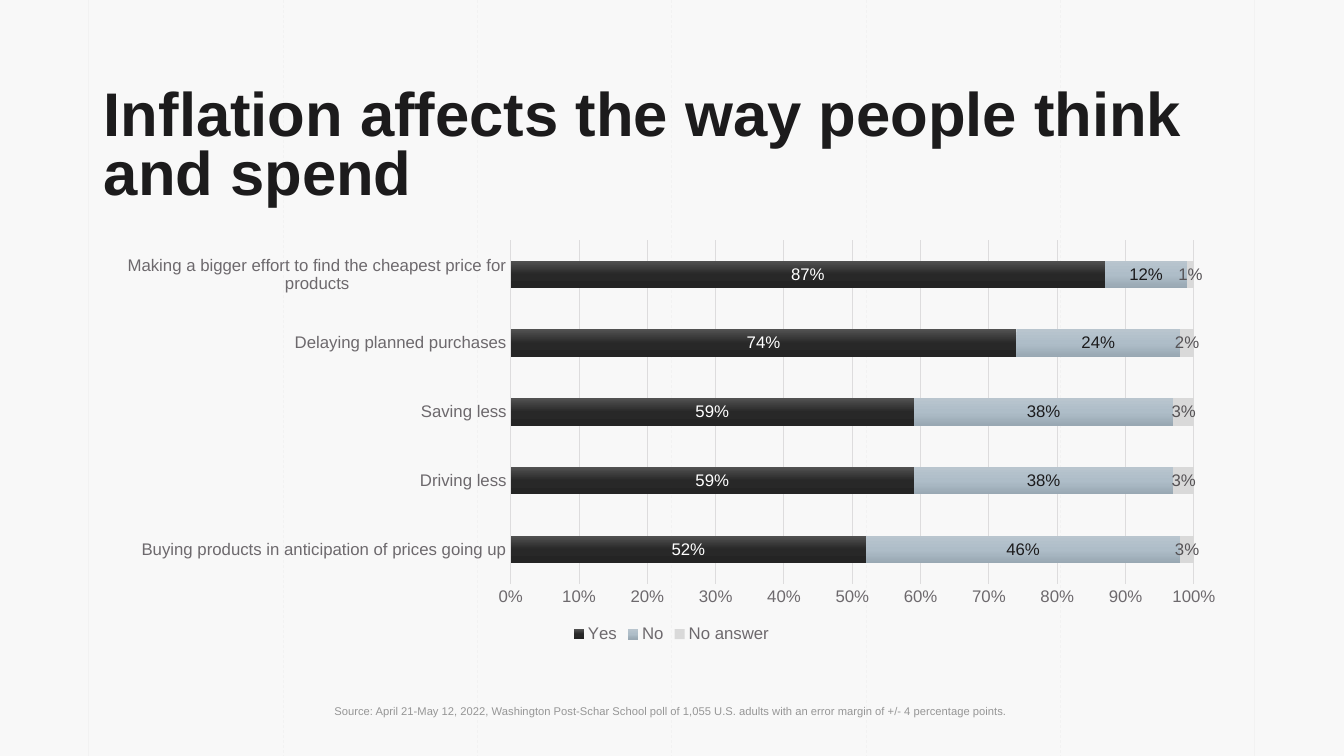
from lxml import etree
from pptx import Presentation
from pptx.chart.data import CategoryChartData
from pptx.dml.color import RGBColor
from pptx.enum.chart import XL_CHART_TYPE, XL_LABEL_POSITION, XL_LEGEND_POSITION, XL_TICK_MARK
from pptx.enum.dml import MSO_LINE
from pptx.enum.shapes import MSO_CONNECTOR, MSO_SHAPE
from pptx.enum.text import MSO_ANCHOR, PP_ALIGN
from pptx.oxml.ns import qn
from pptx.util import Inches, Pt

STACKED_BARS = XL_CHART_TYPE.BAR_STACKED
CENTER_LABEL = XL_LABEL_POSITION.CENTER
BOTTOM = XL_LEGEND_POSITION.BOTTOM
NO_TICK = XL_TICK_MARK.NONE
DASH = MSO_LINE.DASH
STRAIGHT = MSO_CONNECTOR.STRAIGHT
RECTANGLE = MSO_SHAPE.RECTANGLE
TOP = MSO_ANCHOR.TOP
LEFT, CENTER = PP_ALIGN.LEFT, PP_ALIGN.CENTER

FONT = "Arial"
COLORS = {
    "guide": "F2F2F2", "title": "1C1B1C", "axis_text": "6D696D", "grid": "DDDCDD",
    "source": "969696", "no_answer": "D9D9D9", "on_dark": "FFFFFF", "on_pale": "565356",
}
GRADIENTS = {
    "Yes": ("525252", "282828", "242424"),
    "No": ("B9C5CE", "AEBDC8", "99A8B3"),
}
GUIDE_LEFT, GUIDE_STEP, GUIDE_COUNT = 0.88, 1.927, 7
CONTENT_LEFT, CONTENT_WIDTH = 1.03, 11.25


def rgb(name):
    return RGBColor.from_string(COLORS[name])


def style_font(font, size, color, bold=False):
    font.name = FONT
    font.size = Pt(size)
    font.bold = bold
    font.color.rgb = rgb(color)


prs = Presentation()
prs.slide_width, prs.slide_height = Inches(13.33), Inches(7.5)
slide = prs.slides.add_slide(prs.slide_layouts[5])
shapes = slide.shapes

# Vertical guides: solid at both ends, dashed between
for column in range(GUIDE_COUNT):
    x = Inches(GUIDE_LEFT + column * GUIDE_STEP)
    guide = shapes.add_connector(STRAIGHT, x, 0, x, prs.slide_height)
    guide.line.color.rgb = rgb("guide")
    guide.line.width = Pt(0.5)
    if 0 < column < GUIDE_COUNT - 1:
        guide.line.dash_style = DASH
    etree.SubElement(guide._element.spPr, qn("a:effectLst"))

# Half-transparent veil over the guides
veil = shapes.add_shape(RECTANGLE, 0, 0, prs.slide_width, prs.slide_height)
veil.shadow.inherit = False
veil.fill.solid()
veil.fill.fore_color.rgb = rgb("guide")
veil.line.fill.background()
veil_color = veil._element.spPr.find(qn("a:solidFill"))[0]
etree.SubElement(veil_color, qn("a:alpha"), val="50000")

# Title and source line
title = shapes.title
shapes._spTree.append(title._element)  # in front of the veil
title.left, title.top = Inches(CONTENT_LEFT), Inches(0.88)
title.width, title.height = Inches(CONTENT_WIDTH), Inches(1)
source = shapes.add_textbox(Inches(CONTENT_LEFT), Inches(6.99), Inches(CONTENT_WIDTH), Inches(0.13))

for box, words, align, size, color, bold in (
    (title, "Inflation affects the way people think and spend", LEFT, 44, "title", True),
    (source, "Source: April 21-May 12, 2022, Washington Post-Schar School poll of 1,055 U.S. adults "
             "with an error margin of +/- 4 percentage points.", CENTER, 8, "source", False),
):
    frame = box.text_frame
    frame.word_wrap = True
    frame.vertical_anchor = TOP
    frame.margin_left = frame.margin_top = frame.margin_right = frame.margin_bottom = 0
    paragraph = frame.paragraphs[0]
    paragraph.alignment = align
    run = paragraph.add_run()
    run.text = words
    style_font(run.font, size, color, bold)
title.text_frame.paragraphs[0].line_spacing = 0.8

# Poll results, listed from the bottom bar up
poll = CategoryChartData(number_format="0%")
poll.categories = [
    "Buying products in anticipation of prices going up",
    "Driving less",
    "Saving less",
    "Delaying planned purchases",
    "Making a bigger effort to find the cheapest price for products",
]
poll.add_series("Yes", (0.52, 0.59, 0.59, 0.74, 0.87))
poll.add_series("No", (0.46, 0.38, 0.38, 0.24, 0.12))
poll.add_series("No answer", (0.03, 0.03, 0.03, 0.02, 0.01))
chart = shapes.add_chart(STACKED_BARS, Inches(1.04), Inches(2.3), Inches(11.24), Inches(4.12), poll).chart
style_font(chart.font, 10, "title")
chart.has_title = False
chart.has_legend = True
chart.legend.position = BOTTOM
chart.legend.include_in_layout = False
style_font(chart.legend.font, 12, "axis_text")

# Axes
for axis in (chart.category_axis, chart.value_axis):
    axis.major_tick_mark = axis.minor_tick_mark = NO_TICK
    style_font(axis.tick_labels.font, 12, "axis_text")
chart.category_axis.format.line.color.rgb = rgb("grid")
chart.category_axis.format.line.width = Pt(1)
percent = chart.value_axis
percent.minimum_scale, percent.maximum_scale, percent.major_unit = 0, 1, 0.1
percent.tick_labels.number_format = "0%"
percent.tick_labels.number_format_is_linked = False
percent.format.line.fill.background()
percent.major_gridlines.format.line.color.rgb = rgb("grid")
percent.major_gridlines.format.line.width = Pt(0.75)

# Bars and their labels
plot = chart.plots[0]
plot.gap_width, plot.overlap = 150, 100
plot.vary_by_categories = False
for answer, label_color in zip(plot.series, ("on_dark", "title", "on_pale")):
    fill = answer.format.fill
    if answer.name in GRADIENTS:
        fill.gradient()
        fill.gradient_angle = 270  # top to bottom
        stops = fill._fill._gradFill.find(qn("a:gsLst"))
        stops.clear()
        for position, shade in zip((0, 50000, 100000), GRADIENTS[answer.name]):
            stop = etree.SubElement(stops, qn("a:gs"), pos=str(position))
            etree.SubElement(stop, qn("a:srgbClr"), val=shade)
    else:
        fill.solid()
        fill.fore_color.rgb = rgb("no_answer")
    labels = answer.data_labels
    labels.show_value = True
    labels.position = CENTER_LABEL
    labels.number_format = "0%"
    labels.number_format_is_linked = False
    style_font(labels.font, 12, label_color)

prs.save("out.pptx")
